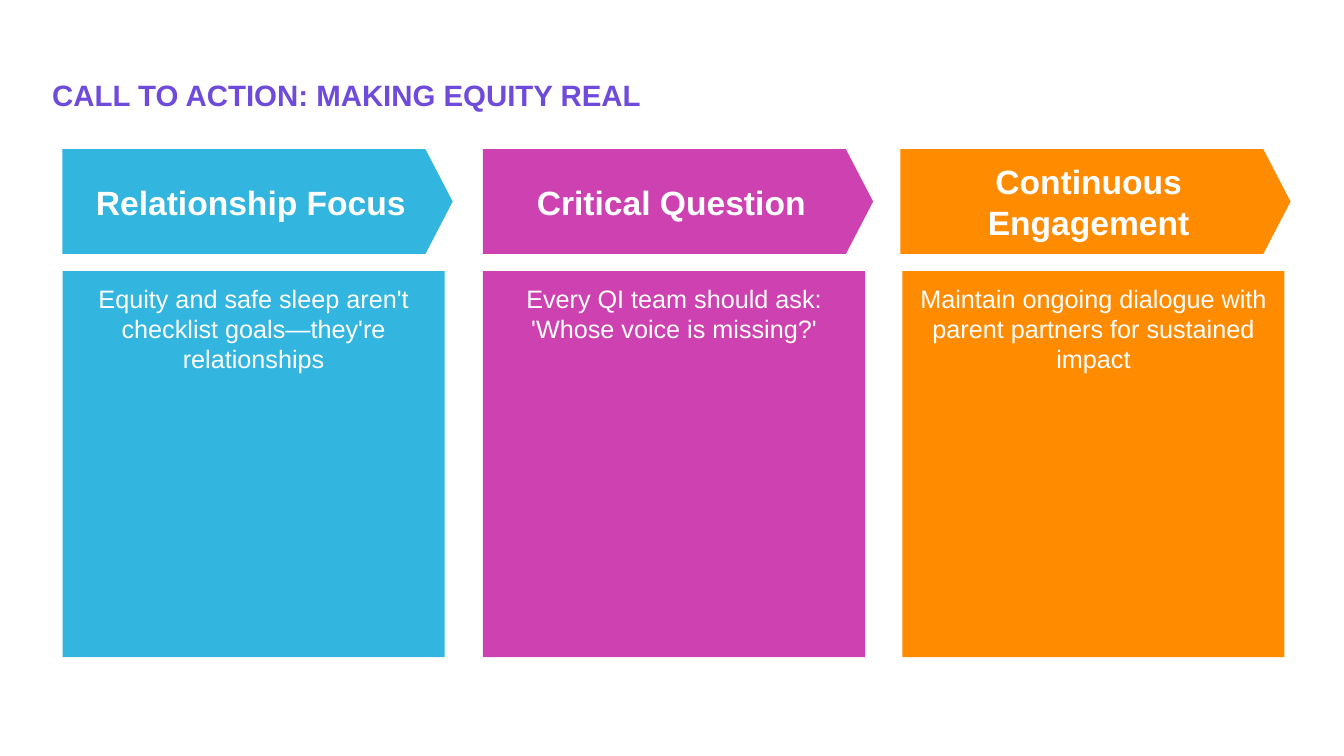
from pptx import Presentation
from pptx import util as u
from pptx.dml.color import RGBColor
from pptx.enum import shapes, text

COLORS = {
    "title": "6F4BDC",
    "blue": "32B5DF",
    "pink": "CD41B0",
    "orange": "FF8B00",
    "white": "FFFFFF",
}

# Arrow left, box left, colour, heading, message
COLUMNS = [
    (0.62, 0.62, "blue", "Relationship Focus",
     "Equity and safe sleep aren't checklist goals—they're relationships"),
    (4.79, 4.79, "pink", "Critical Question",
     "Every QI team should ask: 'Whose voice is missing?'"),
    (8.93, 8.95, "orange", "Continuous Engagement",
     "Maintain ongoing dialogue with parent partners for sustained impact"),
]


def write(sp, words, size, color, bold, align, anchor):
    tf = sp.text_frame
    tf.word_wrap = True
    tf.vertical_anchor = anchor
    p = tf.paragraphs[0]
    p.alignment = align
    r = p.add_run()
    r.text = words
    r.font.name = "Arial"
    r.font.size = u.Pt(size)
    r.font.bold = bold
    r.font.color.rgb = RGBColor.from_string(COLORS[color])


def add_title(slide, words):
    sp = slide.shapes.add_textbox(
        u.Inches(0.42), u.Inches(0.32), u.Inches(12.47), u.Inches(0.84))
    write(sp, words, 21, "title", True, text.PP_ALIGN.LEFT, text.MSO_ANCHOR.BOTTOM)


def add_panel(slide, kind, box, color, words, size, bold, anchor, top_inset):
    sp = slide.shapes.add_shape(kind, *(u.Inches(v) for v in box))
    sp.shadow.inherit = False
    sp.fill.solid()
    sp.fill.fore_color.rgb = RGBColor.from_string(COLORS[color])
    sp.line.fill.background()
    tf = sp.text_frame
    tf.margin_left = tf.margin_right = tf.margin_bottom = u.Inches(0.05)
    tf.margin_top = u.Inches(top_inset)
    write(sp, words, size, "white", bold, text.PP_ALIGN.CENTER, anchor)
    return sp


def add_column(slide, arrow_left, box_left, color, heading, message):
    add_panel(slide, shapes.MSO_SHAPE.RECTANGLE, (box_left, 2.69, 3.79, 3.83),
              color, message, 18, False, text.MSO_ANCHOR.TOP, 0.12)
    arrow = add_panel(slide, shapes.MSO_SHAPE.PENTAGON, (arrow_left, 1.48, 3.87, 1.04),
                      color, heading, 24, True, text.MSO_ANCHOR.MIDDLE, 0.05)
    arrow.adjustments[0] = 0.26


def main():
    prs = Presentation()
    prs.slide_width = u.Inches(13.33)
    prs.slide_height = u.Inches(7.5)
    slide = prs.slides.add_slide(prs.slide_layouts[6])

    # Heading
    add_title(slide, "CALL TO ACTION: MAKING EQUITY REAL")

    # Three columns, each an arrow above a box
    for column in COLUMNS:
        add_column(slide, *column)

    prs.save("out.pptx")


if __name__ == "__main__":
    main()
